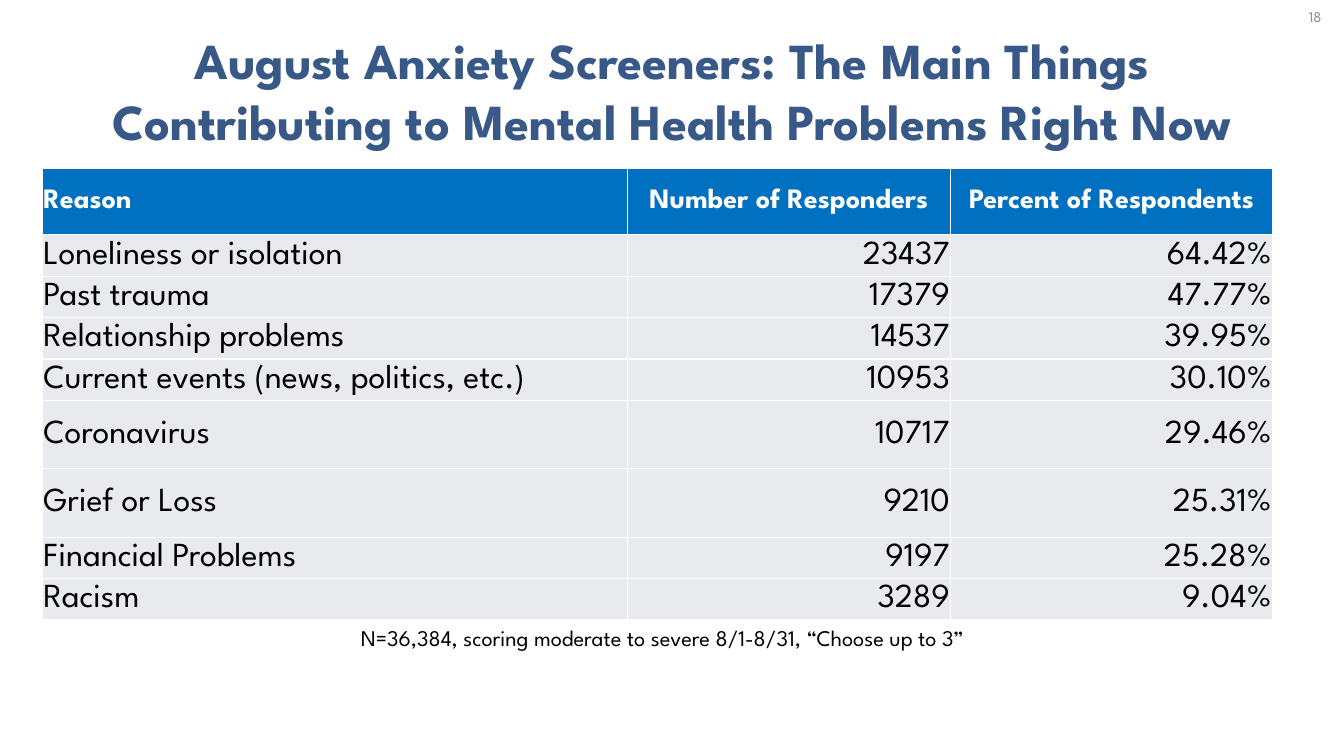
"""Build the August anxiety screener slide with its table of contributing reasons."""
from lxml import etree
from pptx import Presentation
from pptx.dml.color import RGBColor
from pptx.enum.text import MSO_ANCHOR, PP_ALIGN
from pptx.oxml.ns import qn
from pptx.util import Inches, Pt

LEFT, CENTER, RIGHT = PP_ALIGN.LEFT, PP_ALIGN.CENTER, PP_ALIGN.RIGHT
TOP, MIDDLE = MSO_ANCHOR.TOP, MSO_ANCHOR.MIDDLE
FONT_NAME = "League Spartan"
TITLE_BLUE = RGBColor(0x38, 0x59, 0x88)
HEADER_BLUE = RGBColor(0x00, 0x70, 0xC0)
ROW_GRAY = RGBColor(0xE8, 0xEA, 0xED)
NUMBER_GRAY = RGBColor(0x8C, 0x8C, 0x8C)
WHITE = RGBColor(0xFF, 0xFF, 0xFF)
BLACK = RGBColor(0x00, 0x00, 0x00)

REASONS = [
    ("Reason", "Number of Responders", "Percent of Respondents"),
    ("Loneliness or isolation", "23437", "64.42%"),
    ("Past trauma", "17379", "47.77%"),
    ("Relationship problems", "14537", "39.95%"),
    ("Current events (news, politics, etc.)", "10953", "30.10%"),
    ("Coronavirus", "10717", "29.46%"),
    ("Grief or Loss", "9210", "25.31%"),
    ("Financial Problems", "9197", "25.28%"),
    ("Racism", "3289", "9.04%"),
]
COLUMN_WIDTHS = [5.8, 3.21, 3.19]
ROW_HEIGHTS = [0.66] + [0.38] * 4 + [0.68] * 2 + [0.38] * 2
CELL_FORMAT = {
    "vertical_anchor": MIDDLE,
    "margin_left": Inches(0.01),
    "margin_top": Inches(0.01),
    "margin_right": Inches(0.01),
    "margin_bottom": 0,
}


def write_text(text_frame, text, alignment, size, color, bold=False):
    """Fill the first paragraph of a text frame and format it."""
    paragraph = text_frame.paragraphs[0]
    paragraph.text = text
    paragraph.alignment = alignment
    font_format = {"name": FONT_NAME, "size": Pt(size), "bold": bold}
    for name, value in font_format.items():
        setattr(paragraph.font, name, value)
    paragraph.font.color.rgb = color


def add_borders(cell):
    """Draw a thin white line on each side of a table cell."""
    properties = cell._tc.get_or_add_tcPr()
    for side in ("a:lnL", "a:lnR", "a:lnT", "a:lnB"):
        line = etree.SubElement(properties, qn(side), w=str(Pt(1)))
        fill = etree.SubElement(line, qn("a:solidFill"))
        etree.SubElement(fill, qn("a:srgbClr"), val=str(WHITE))


presentation = Presentation()
presentation.slide_width = Inches(13.33)
presentation.slide_height = Inches(7.5)
slide = presentation.slides.add_slide(presentation.slide_layouts[6])

TEXT_BOXES = [
    ((0.56, 0.53, 12.21, 0.72), MIDDLE,
     ("August Anxiety Screeners: The Main Things Contributing to Mental Health Problems Right Now",
      CENTER, 36, TITLE_BLUE, True)),
    ((12.76, 0, 0.57, 0.32), MIDDLE, ("18", CENTER, 10.7, NUMBER_GRAY)),
    ((3.48, 6.14, 7.3, 0.37), TOP,
     ("N=36,384, scoring moderate to severe 8/1-8/31, “Choose up to 3”", LEFT, 16, BLACK)),
]
for position, anchor, content in TEXT_BOXES:
    text_box = slide.shapes.add_textbox(*map(Inches, position))
    text_box.text_frame.word_wrap = True
    text_box.text_frame.vertical_anchor = anchor
    write_text(text_box.text_frame, *content)

table = slide.shapes.add_table(
    len(REASONS), len(COLUMN_WIDTHS), Inches(0.42), Inches(1.67),
    Inches(sum(COLUMN_WIDTHS)), Inches(sum(ROW_HEIGHTS))).table
for column, width in zip(table.columns, COLUMN_WIDTHS):
    column.width = Inches(width)
for row, height in zip(table.rows, ROW_HEIGHTS):
    row.height = Inches(height)

for row_index, reason in enumerate(REASONS):
    is_header = row_index == 0
    size, color, background = (20, WHITE, HEADER_BLUE) if is_header else (24, BLACK, ROW_GRAY)
    value_alignment = CENTER if is_header else RIGHT
    for column_index, text in enumerate(reason):
        cell = table.cell(row_index, column_index)
        for name, value in CELL_FORMAT.items():
            setattr(cell, name, value)
        add_borders(cell)
        cell.fill.solid()
        cell.fill.fore_color.rgb = background
        alignment = value_alignment if column_index else LEFT
        write_text(cell.text_frame, text, alignment, size, color, is_header)

presentation.save("out.pptx")
